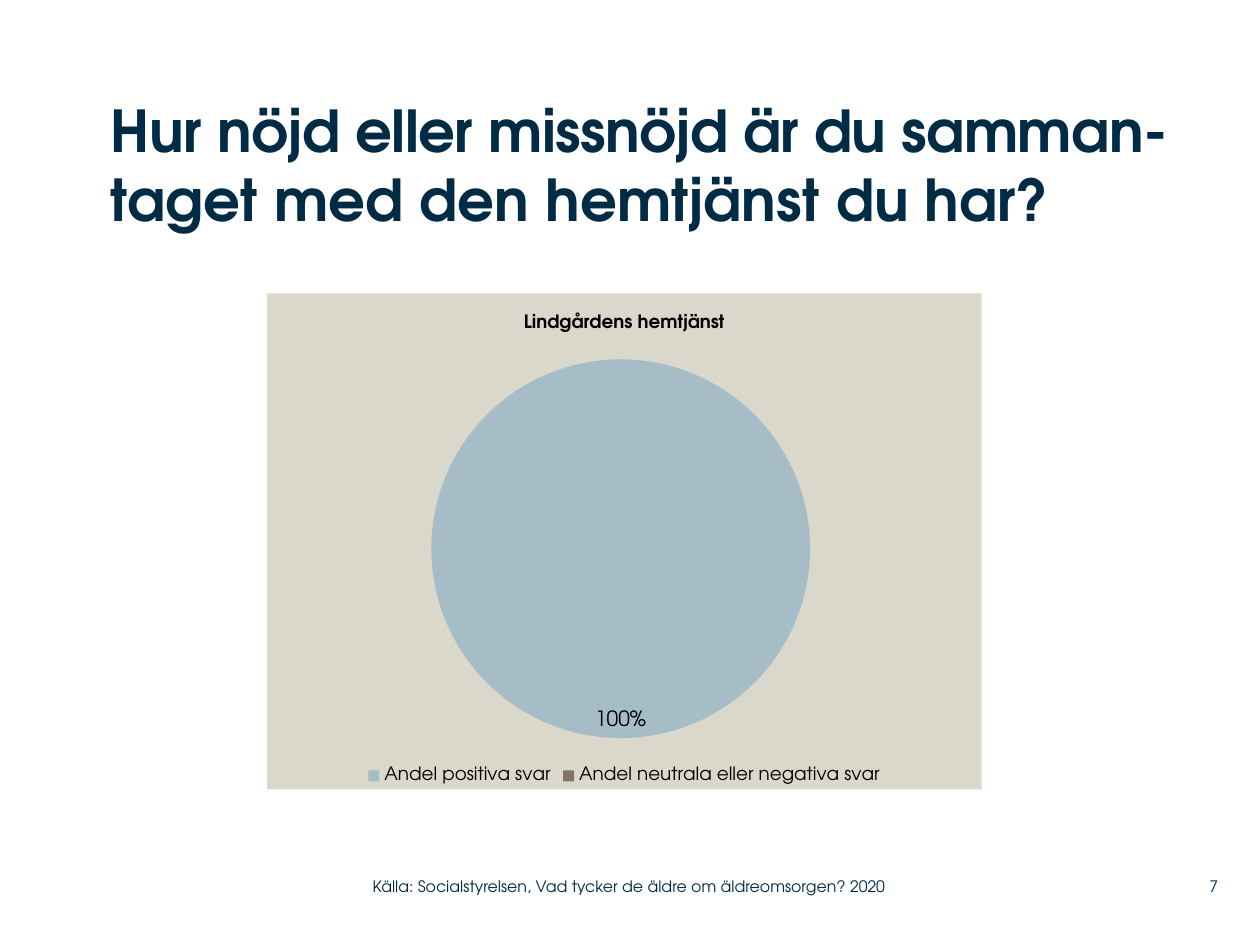
from lxml import etree
from pptx import Presentation
from pptx.chart.data import CategoryChartData
from pptx.dml.color import RGBColor
from pptx.enum.chart import XL_CHART_TYPE, XL_LABEL_POSITION, XL_LEGEND_POSITION
from pptx.enum.text import MSO_ANCHOR, PP_ALIGN
from pptx.oxml.ns import qn
from pptx.util import Pt

FONT = "TeX Gyre Adventor"
NAVY, BLACK, SAND = "002B45", "000000", "DAD7CB"

HEADING = ["Hur nöjd eller missnöjd är du samman-", "taget med den hemtjänst du har?"]
SOURCE = "Källa: Socialstyrelsen, Vad tycker de äldre om äldreomsorgen? 2020"
PAGE_NUMBER = "7"
CHART_TITLE = "Lindgårdens hemtjänst"
ANSWERS = [  # category, percent, colour
    ("Andel positiva svar", 100, "A6BCC6"),
    ("Andel neutrala eller negativa svar", 0, "857363"),
]
# Pie area as fractions of the chart
PIE_AREA = {"x": 0.23, "y": 0.13, "w": 0.53, "h": 0.77}


def rgb(color):
    return RGBColor.from_string(color)


def style(font, size, color, bold=False):
    font.name, font.size, font.bold = FONT, Pt(size), bold
    font.color.rgb = rgb(color)


def add_text(page, lines, place, size, bold=False,
             align=PP_ALIGN.LEFT, anchor=MSO_ANCHOR.MIDDLE):
    box = page.shapes.add_textbox(*map(Pt, place))
    frame = box.text_frame
    frame.word_wrap = True
    frame.vertical_anchor = anchor
    frame.margin_left = frame.margin_right = 0
    frame.margin_top = frame.margin_bottom = 0
    para = frame.paragraphs[0]
    para.alignment = align
    for index, line in enumerate(lines):
        if index:
            para.add_line_break()
        span = para.add_run()
        span.text = line
        style(span.font, size, NAVY, bold)
    return box


def place_plot(chart, area):
    """Give the plot area a fixed inner layout."""
    plot_area = chart.plots[0]._element.getparent()
    for old in plot_area.findall(qn("c:layout")):
        plot_area.remove(old)
    layout = etree.Element(qn("c:layout"))
    plot_area.insert(0, layout)
    manual = etree.SubElement(layout, qn("c:manualLayout"))
    settings = [("layoutTarget", "inner"), ("xMode", "edge"), ("yMode", "edge"), *area.items()]
    for name, value in settings:
        etree.SubElement(manual, qn(f"c:{name}")).set("val", str(value))


def fill_chart(chart, color):
    """Fill the chart background, without a border."""
    properties = etree.Element(qn("c:spPr"))
    solid = etree.SubElement(properties, qn("a:solidFill"))
    etree.SubElement(solid, qn("a:srgbClr")).set("val", color)
    line = etree.SubElement(properties, qn("a:ln"))
    etree.SubElement(line, qn("a:noFill"))
    chart._chartSpace.find(qn("c:chart")).addnext(properties)


def add_pie(page, place):
    data = CategoryChartData()
    data.categories = [name for name, _, _ in ANSWERS]
    data.add_series("Series 1", [value for _, value, _ in ANSWERS])
    chart = page.shapes.add_chart(XL_CHART_TYPE.PIE, *map(Pt, place), data).chart
    style(chart.font, 18, BLACK)
    fill_chart(chart, SAND)

    chart.has_title = True
    span = chart.chart_title.text_frame.paragraphs[0].add_run()
    span.text = CHART_TITLE
    style(span.font, 10.5, BLACK, bold=True)
    chart.chart_title.include_in_layout = False

    chart.has_legend = True
    chart.legend.position = XL_LEGEND_POSITION.BOTTOM
    chart.legend.include_in_layout = False
    style(chart.legend.font, 10.5, BLACK)

    plot = chart.plots[0]
    plot.vary_by_categories = True
    for index, (_, _, color) in enumerate(ANSWERS):
        fill = plot.series[0].points[index].format.fill
        fill.solid()
        fill.fore_color.rgb = rgb(color)

    labels = plot.series[0].data_labels
    labels.show_percentage = True
    labels.show_value = False
    labels.number_format = "0%;;"  # zero shares get no label
    labels.number_format_is_linked = False
    labels.position = XL_LABEL_POSITION.INSIDE_END
    style(labels.font, 12, BLACK)
    place_plot(chart, PIE_AREA)


deck = Presentation()
deck.slide_width, deck.slide_height = Pt(720), Pt(540)
page = deck.slides.add_slide(deck.slide_layouts[6])

add_text(page, [PAGE_NUMBER], (662.4, 496, 33.6, 21), 9, align=PP_ALIGN.RIGHT)
add_text(page, [SOURCE], (213, 496, 319, 21), 9)
add_pie(page, (152.6, 167.6, 408.4, 283.5))
heading = add_text(page, HEADING, (63.4, 54, 643.6, 102), 33, bold=True, anchor=MSO_ANCHOR.TOP)
first_line = heading.text_frame.paragraphs[0].runs[0]
first_line.font._element.set("spc", "-30")

deck.save("out.pptx")
